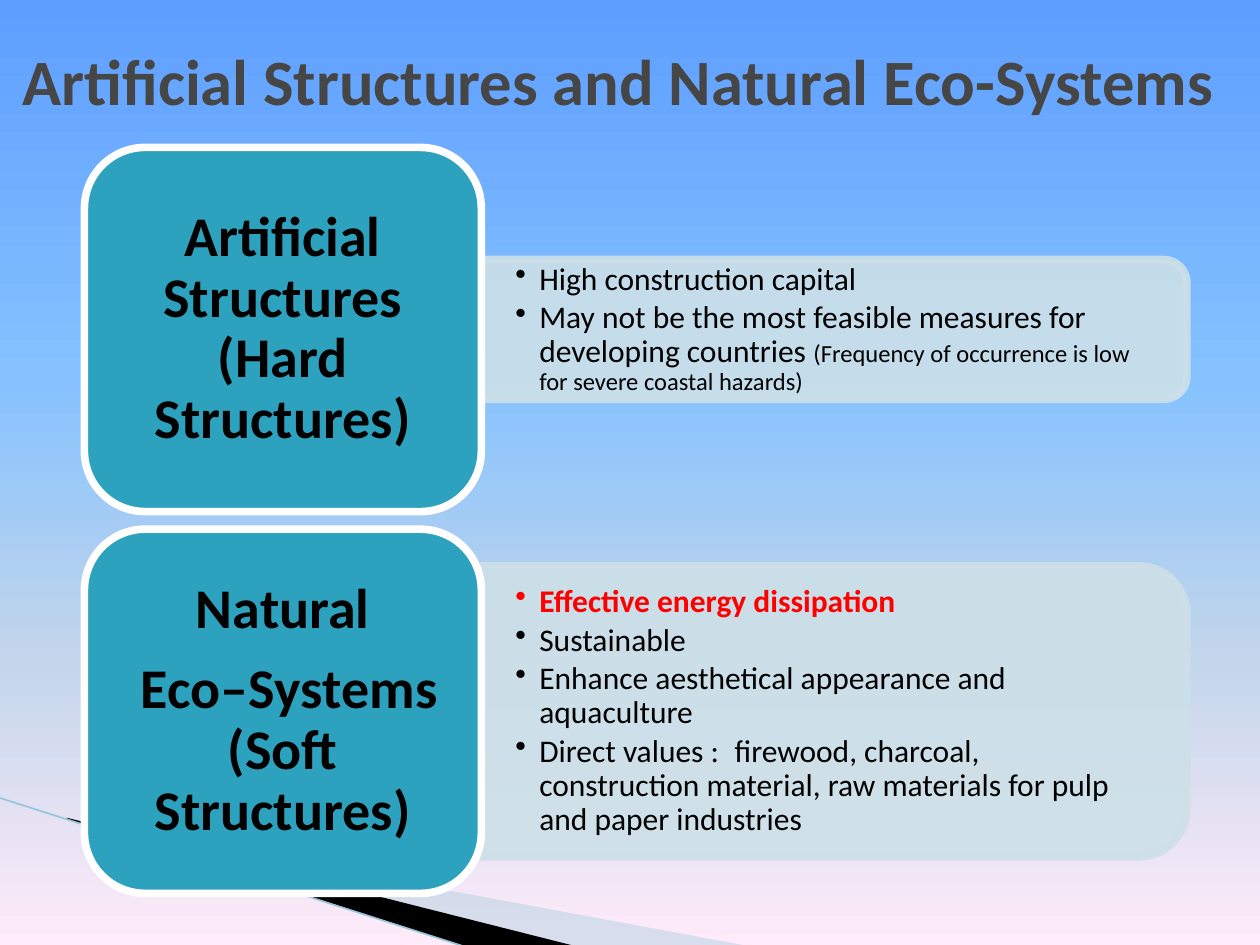
from lxml import etree
from pptx import Presentation
from pptx.dml.color import RGBColor
from pptx.enum import shapes, text
from pptx.oxml.ns import qn
from pptx.util import Inches, Pt

COLORS = {
    "black": "000000", "red": "FF0000", "white": "FFFFFF", "title": "464646",
    "teal": "2DA2BF", "panel": "CDE0E8", "wedge": "A0CBDC", "edge": "97C5D8",
}
SKY = [(0, "5E9EFF"), (40, "85C2FF"), (70, "C4D6EB"), (100, "FFEBFA")]
FONT = "Calibri"
CARD_LEFT, CARD_WIDTH, CARD_HEIGHT = 0.67, 3.15, 2.89
PANEL_LEFT, PANEL_WIDTH = CARD_LEFT + CARD_WIDTH, 5.6

# Card top, card paragraphs, panel height, text width, bullets as runs of (text, size, colour, bold)
ROWS = [
    (1.17, ["Artificial Structures (Hard Structures)"], 1.11, 5.55, [
        [("High construction capital", 18, "black", False)],
        [("May not be the most feasible measures for developing countries ",
          18, "black", False),
         ("(Frequency of occurrence is low for severe coastal hazards)",
          14, "black", False)],
    ]),
    (4.2, ["Natural", " Eco–Systems (Soft Structures)"], 2.31, 5.49, [
        [("Effective energy dissipation", 18, "red", True)],
        [("Sustainable", 18, "black", False)],
        [("Enhance aesthetical appearance and aquaculture", 18, "black", False)],
        [("Direct values :\tfirewood, charcoal, construction material, "
          "raw materials for pulp and paper industries", 18, "black", False)],
    ]),
]


def rgb(name):
    return RGBColor.from_string(COLORS[name])


def set_alpha(fill_parent, percent):
    """Make the solid fill directly inside an element partly transparent."""
    color = fill_parent.find(qn("a:solidFill"))[0]
    etree.SubElement(color, qn("a:alpha"), val=str(percent * 1000))


def paint(sp, fill, line=None, alpha=None):
    sp.shadow.inherit = False
    sp.fill.solid()
    sp.fill.fore_color.rgb = rgb(fill)
    if line:
        sp.line.color.rgb = rgb(line)
        sp.line.width = Pt(4.33)
    else:
        sp.line.fill.background()
    if alpha:
        set_alpha(sp._element.spPr, alpha)
        if line:
            set_alpha(sp._element.spPr.find(qn("a:ln")), alpha)


def style_run(r, size, color, bold):
    r.font.name = FONT
    r.font.size = Pt(size)
    r.font.color.rgb = rgb(color)
    r.font.bold = bold


def set_frame(tf, side, top):
    tf.word_wrap = True
    tf.vertical_anchor = text.MSO_ANCHOR.MIDDLE
    tf.margin_left = tf.margin_right = Inches(side)
    tf.margin_top = tf.margin_bottom = Inches(top)


def add_background(s):
    fill = s.background.fill
    fill.gradient()
    fill.gradient_angle = 270
    stops = s._element.find(".//" + qn("a:gsLst"))
    for stop in list(stops):
        stops.remove(stop)
    for position, color in SKY:
        stop = etree.SubElement(stops, qn("a:gs"), pos=str(position * 1000))
        etree.SubElement(stop, qn("a:srgbClr"), val=color)


def add_wedge(s, points, fill, alpha=None):
    first, *rest = [(Inches(x), Inches(y)) for x, y in points]
    builder = s.shapes.build_freeform(*first)
    builder.add_line_segments(rest)
    paint(builder.convert_to_shape(), fill, alpha=alpha)


def add_edge(s):
    line = s.shapes.add_connector(
        shapes.MSO_CONNECTOR.STRAIGHT,
        Inches(-0.01), Inches(6.33), Inches(3.71), Inches(7.52))
    line.line.color.rgb = rgb("edge")
    line.line.width = Pt(0.95)
    etree.SubElement(line._element.spPr, qn("a:effectLst"))


def add_title(s, title):
    tf = s.shapes.add_textbox(
        Inches(0.08), Inches(0.17), Inches(9.92), Inches(0.92)).text_frame
    set_frame(tf, 0.1, 0.05)
    tf.text = title
    p = tf.paragraphs[0]
    p.alignment = text.PP_ALIGN.JUSTIFY
    style_run(p.runs[0], 36.9, "title", True)


def add_panel(s, middle, height):
    """Add a panel rounded on its right, made by turning a top-rounded one."""
    left = PANEL_LEFT + (PANEL_WIDTH - height) / 2
    sp = s.shapes.add_shape(
        shapes.MSO_SHAPE.ROUND_2_SAME_RECTANGLE,
        Inches(left), Inches(middle - PANEL_WIDTH / 2),
        Inches(height), Inches(PANEL_WIDTH))
    sp.rotation = 90
    paint(sp, "panel", "panel", 90)


def make_bullet(p):
    pPr = p._p.get_or_add_pPr()
    pPr.set("marL", str(Inches(0.19)))
    pPr.set("indent", str(-Inches(0.19)))
    etree.SubElement(pPr, qn("a:buChar"), char="•")
    if "\t" in p.text:
        tabs = etree.SubElement(pPr, qn("a:tabLst"))
        etree.SubElement(tabs, qn("a:tab"), pos=str(Inches(1.74)), algn="l")


def add_bullets(s, middle, height, width, bullets):
    tf = s.shapes.add_textbox(
        Inches(PANEL_LEFT), Inches(middle - height / 2),
        Inches(width), Inches(height)).text_frame
    set_frame(tf, 0.27, 0.14)
    for i, runs in enumerate(bullets):
        p = tf.add_paragraph() if i else tf.paragraphs[0]
        for content, *style in runs:
            r = p.add_run()
            r.text = content
            style_run(r, *style)
        make_bullet(p)
        p.line_spacing = 0.9
        p.space_after = Pt(2.7)


def add_card(s, top, lines):
    sp = s.shapes.add_shape(
        shapes.MSO_SHAPE.ROUNDED_RECTANGLE, Inches(CARD_LEFT), Inches(top),
        Inches(CARD_WIDTH), Inches(CARD_HEIGHT))
    paint(sp, "teal", "white")
    tf = sp.text_frame
    set_frame(tf, 0.13, 0.07)
    tf.text = "\n".join(lines)
    for p in tf.paragraphs:
        p.alignment = text.PP_ALIGN.CENTER
        p.line_spacing = 0.9
        p.space_after = Pt(11.2)
        style_run(p.runs[0], 32, "black", True)


def main():
    prs = Presentation()
    prs.slide_width, prs.slide_height = Inches(10), Inches(7.5)
    s = prs.slides.add_slide(prs.slide_layouts[6])
    add_background(s)
    add_wedge(s, [(0.55, 6.51), (5.95, 7.51), (4.56, 7.51), (0.55, 6.5)], "wedge", 40)
    add_wedge(s, [(0.53, 6.49), (4.57, 7.51), (3.72, 7.52), (0.54, 6.5)], "black")
    add_edge(s)
    for top, lines, height, width, bullets in ROWS:
        middle = top + CARD_HEIGHT / 2
        add_panel(s, middle, height)
        add_bullets(s, middle, height - 0.11 if height < 2 else 2.08, width, bullets)
        add_card(s, top, lines)
    add_title(s, "Artificial Structures and Natural Eco-Systems")
    prs.save("out.pptx")


if __name__ == "__main__":
    main()
